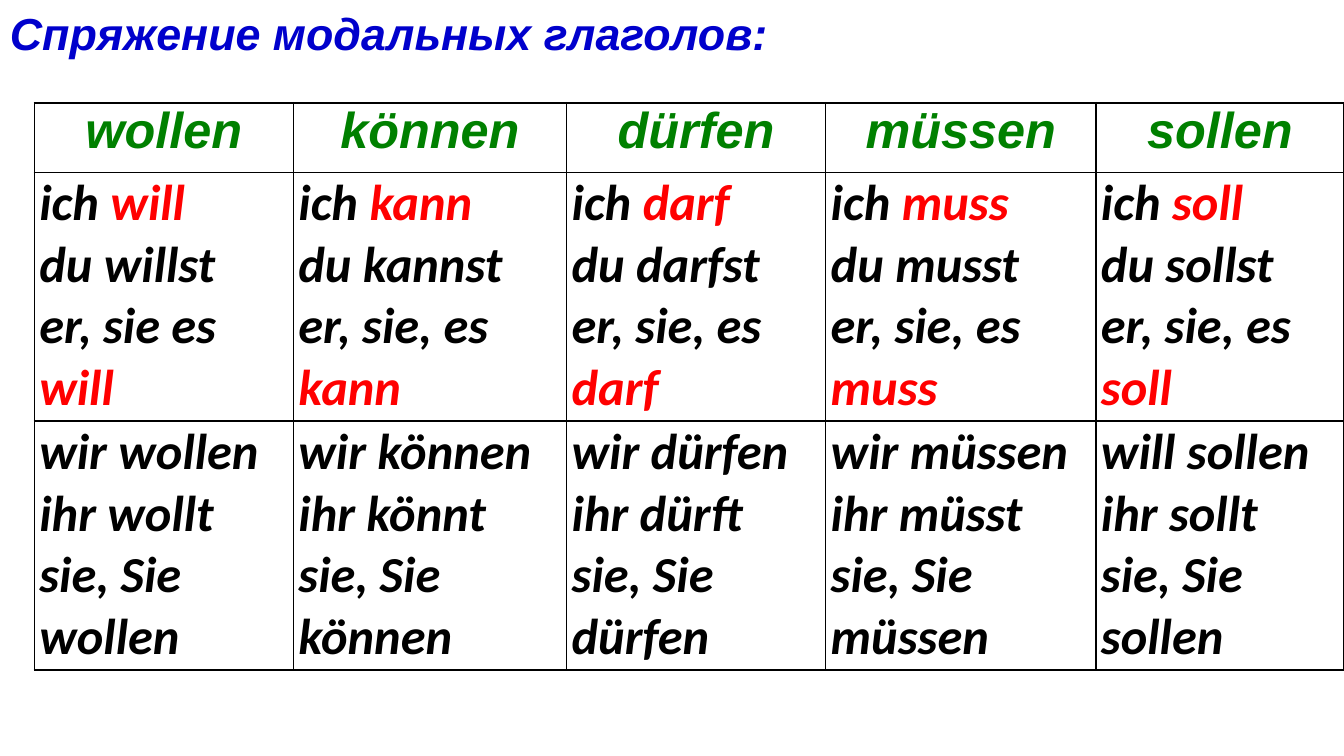
from lxml.etree import SubElement, Element
from pptx import Presentation
from pptx.dml.color import RGBColor
from pptx.enum.text import MSO_ANCHOR, MSO_AUTO_SIZE, PP_ALIGN
from pptx.oxml.ns import qn
from pptx.util import Inches, Pt

BLUE = RGBColor(0x00, 0x00, 0xCC)
GREEN = RGBColor(0x00, 0x80, 0x00)
RED = RGBColor(0xFF, 0x00, 0x00)
BLACK = RGBColor(0x00, 0x00, 0x00)

SLIDE_W, SLIDE_H = 13.33, 7.5
COLS = [2.57, 2.71, 2.57, 2.68, 2.46]
ROWS = [0.69, 2.47, 2.47]
# Line widths above and below each table row, in points
RULES = [(1.5, 1), (1, 1.5), (1.5, 1.5)]

# infinitive, ich/er form, du form, ihr form, third person, first person plural
VERBS = [
    ("wollen", "will", "willst", "wollt", "er, sie es ", "wir"),
    ("können", "kann", "kannst", "könnt", "er, sie, es ", "wir"),
    ("dürfen", "darf", "darfst", "dürft", "er, sie, es ", "wir"),
    ("müssen", "muss", "musst", "müsst", "er, sie, es ", "wir"),
    ("sollen", "soll", "sollst", "sollt", "er, sie, es ", "will"),
]


def add_run(p, text, size, font, color):
    r = p.add_run()
    r.text = text
    r.font.size = Pt(size)
    r.font.name = font
    r.font.bold = r.font.italic = True
    r.font.color.rgb = color


def set_borders(cell, top, bottom):
    """Black lines on all four sides, placed ahead of the cell's fill."""
    tc_pr = cell._tc.get_or_add_tcPr()
    sides = [("L", 1), ("R", 1), ("T", top), ("B", bottom)]
    for i, (side, width) in enumerate(sides):
        ln = Element(qn(f"a:ln{side}"), w=str(Pt(width)))
        fill = SubElement(ln, qn("a:solidFill"))
        SubElement(fill, qn("a:srgbClr"), val=str(BLACK))
        tc_pr.insert(i, ln)


def fill_cell(cell, lines, font, align):
    """Each line is a list of (text, colour) runs."""
    cell.margin_left = cell.margin_right = Inches(0.05)
    cell.margin_top = cell.margin_bottom = 0
    cell.fill.background()
    tf = cell.text_frame
    for i, line in enumerate(lines):
        p = tf.add_paragraph() if i else tf.paragraphs[0]
        p.alignment = align
        for text, color in line:
            add_run(p, text, 36, font, color)


def add_title(s, x, y, w, h):
    tf = s.shapes.add_textbox(Inches(x), Inches(y), Inches(w), Inches(h)).text_frame
    tf.word_wrap = True
    tf.auto_size = MSO_AUTO_SIZE.SHAPE_TO_FIT_TEXT
    tf.vertical_anchor = MSO_ANCHOR.MIDDLE
    add_run(tf.paragraphs[0], "Спряжение модальных глаголов:", 32, "Arial", BLUE)


def add_verb_table(s, x, y):
    table = s.shapes.add_table(
        len(ROWS), len(COLS), Inches(x), Inches(y),
        Inches(sum(COLS)), Inches(sum(ROWS))).table
    table.first_row = table.horz_banding = False
    for row, height in zip(table.rows, ROWS):
        row.height = Inches(height)
    for c, (inf, ich, du, ihr, third, wir) in enumerate(VERBS):
        table.columns[c].width = Inches(COLS[c])
        heading = [[(inf, GREEN)]]
        singular = [[("ich ", BLACK), (ich, RED)],
                    [(f"du {du}", BLACK)],
                    [(third, BLACK), (ich, RED)]]
        plural = [[(f"{wir} {inf}", BLACK)],
                  [(f"ihr {ihr}", BLACK)],
                  [(f"sie, Sie {inf}", BLACK)]]
        for r, lines in enumerate([heading, singular, plural]):
            cell = table.cell(r, c)
            fill_cell(cell, lines, "Calibri" if r else "Arial",
                      PP_ALIGN.LEFT if r else PP_ALIGN.CENTER)
            set_borders(cell, *RULES[r])


def main():
    prs = Presentation()
    prs.slide_width, prs.slide_height = Inches(SLIDE_W), Inches(SLIDE_H)
    s = prs.slides.add_slide(prs.slide_layouts[6])
    # Conjugation table, flush with the right edge
    add_verb_table(s, SLIDE_W - sum(COLS), 1.02)
    # Heading across the top
    add_title(s, 0, 0, SLIDE_W, 0.64)
    prs.save("out.pptx")


if __name__ == "__main__":
    main()
